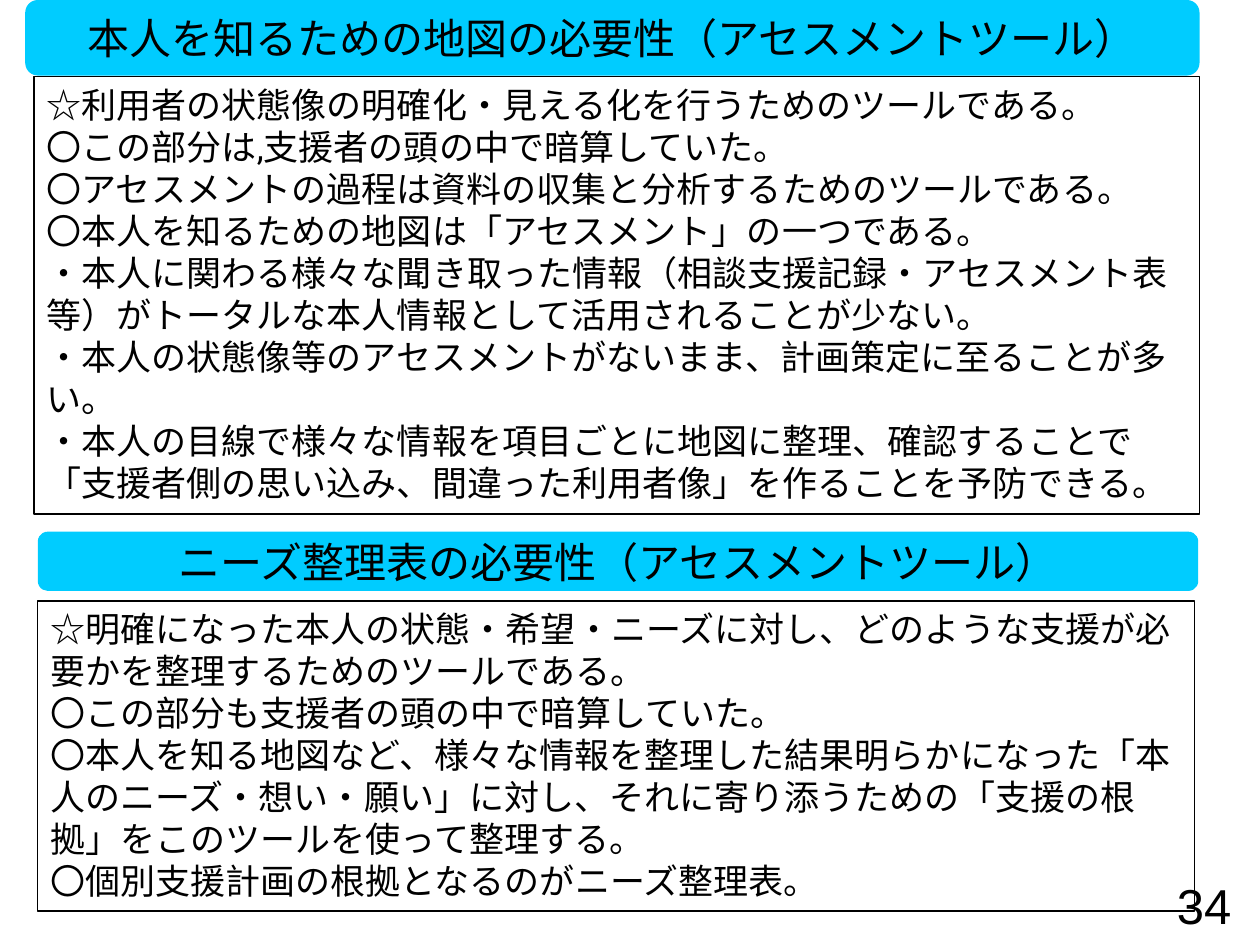
import pptx
import pptx.util
from pptx.dml.color import RGBColor
from pptx.enum.shapes import MSO_SHAPE
from pptx.enum.text import MSO_ANCHOR, PP_ALIGN
from pptx.oxml.ns import qn
from pptx.util import Inches

BLACK = RGBColor(0x00, 0x00, 0x00)
CYAN = RGBColor(0x00, 0xCC, 0xFF)

MAP_TEXT = "\n".join([
    "☆利用者の状態像の明確化・見える化を行うためのツールである。",
    "〇この部分は,支援者の頭の中で暗算していた。",
    "〇アセスメントの過程は資料の収集と分析するためのツールである。",
    "〇本人を知るための地図は「アセスメント」の一つである。",
    "・本人に関わる様々な聞き取った情報（相談支援記録・アセスメント表等）がトータルな本人情報として活用されることが少ない。",
    "・本人の状態像等のアセスメントがないまま、計画策定に至ることが多い。",
    "・本人の目線で様々な情報を項目ごとに地図に整理、確認することで「支援者側の思い込み、間違った利用者像」を作ることを予防できる。",
])
NEEDS_TEXT = "\n".join([
    "☆明確になった本人の状態・希望・ニーズに対し、どのような支援が必要かを整理するためのツールである。",
    "〇この部分も支援者の頭の中で暗算していた。",
    "〇本人を知る地図など、様々な情報を整理した結果明らかになった「本人のニーズ・想い・願い」に対し、それに寄り添うための「支援の根拠」をこのツールを使って整理する。",
    "〇個別支援計画の根拠となるのがニーズ整理表。",
])


class SlideBuilder:
    def __init__(self, slide):
        self.s = slide

    def style(self, font, name, size):
        font.name, font.size = name, pptx.util.Pt(size)
        font.color.rgb = BLACK

    def east_asian(self, r, name):
        """Use the same typeface for Japanese characters."""
        rPr = r._r.get_or_add_rPr()
        rPr.append(rPr.makeelement(qn("a:ea"), {"typeface": name}))

    def shape(self, kind, box):
        sp = self.s.shapes.add_shape(kind, *map(Inches, box))
        sp.shadow.inherit = False
        sp.text_frame.word_wrap = True
        return sp

    def banner(self, box, topic):
        sp = self.shape(MSO_SHAPE.FLOWCHART_ALTERNATE_PROCESS, box)
        sp.fill.solid()
        sp.fill.fore_color.rgb = CYAN
        sp.line.fill.background()
        sp.text_frame.vertical_anchor = MSO_ANCHOR.MIDDLE
        p = sp.text_frame.paragraphs[0]
        p.alignment = PP_ALIGN.CENTER
        for text, name in ((topic, "Calibri"), ("（アセスメントツール）", "Arial")):
            r = p.add_run()
            r.text = text
            self.style(r.font, name, 24)
            self.east_asian(r, name)

    def body(self, box, text):
        sp = self.shape(MSO_SHAPE.RECTANGLE, box)
        sp.fill.background()
        sp.line.color.rgb = BLACK
        sp.line.width = pptx.util.Pt(0.75)
        sp.text_frame.vertical_anchor = MSO_ANCHOR.TOP
        p = sp.text_frame.paragraphs[0]
        p.text = text.replace("\n", "\v")
        p.alignment = PP_ALIGN.LEFT
        p.line_spacing = pptx.util.Pt(24)
        self.style(p.font, "Roboto", 20)
        for r in p.runs:
            self.style(r.font, "Roboto", 20)
            self.east_asian(r, "Roboto")

    def number(self, box, text):
        tf = self.s.shapes.add_textbox(*map(Inches, box)).text_frame
        tf.word_wrap = True
        tf.vertical_anchor = MSO_ANCHOR.MIDDLE
        p = tf.paragraphs[0]
        p.text = text
        p.alignment = PP_ALIGN.RIGHT
        self.style(p.font, "Arial", 28)


def main():
    prs = pptx.Presentation()
    prs.slide_width, prs.slide_height = Inches(10), Inches(7.5)
    b = SlideBuilder(prs.slides.add_slide(prs.slide_layouts[6]))

    # Slide number
    b.number((9.22, 6.92, 0.65, 0.53), "34")

    # Section banners
    b.banner((0.2, 0, 9.32, 0.6), "本人を知るための地図の必要性")
    b.banner((0.3, 4.22, 9.21, 0.47), "ニーズ整理表の必要性")

    # Explanations
    b.body((0.27, 0.61, 9.25, 3.47), MAP_TEXT)
    b.body((0.3, 4.77, 9.18, 2.46), NEEDS_TEXT)

    prs.save("out.pptx")


if __name__ == "__main__":
    main()
